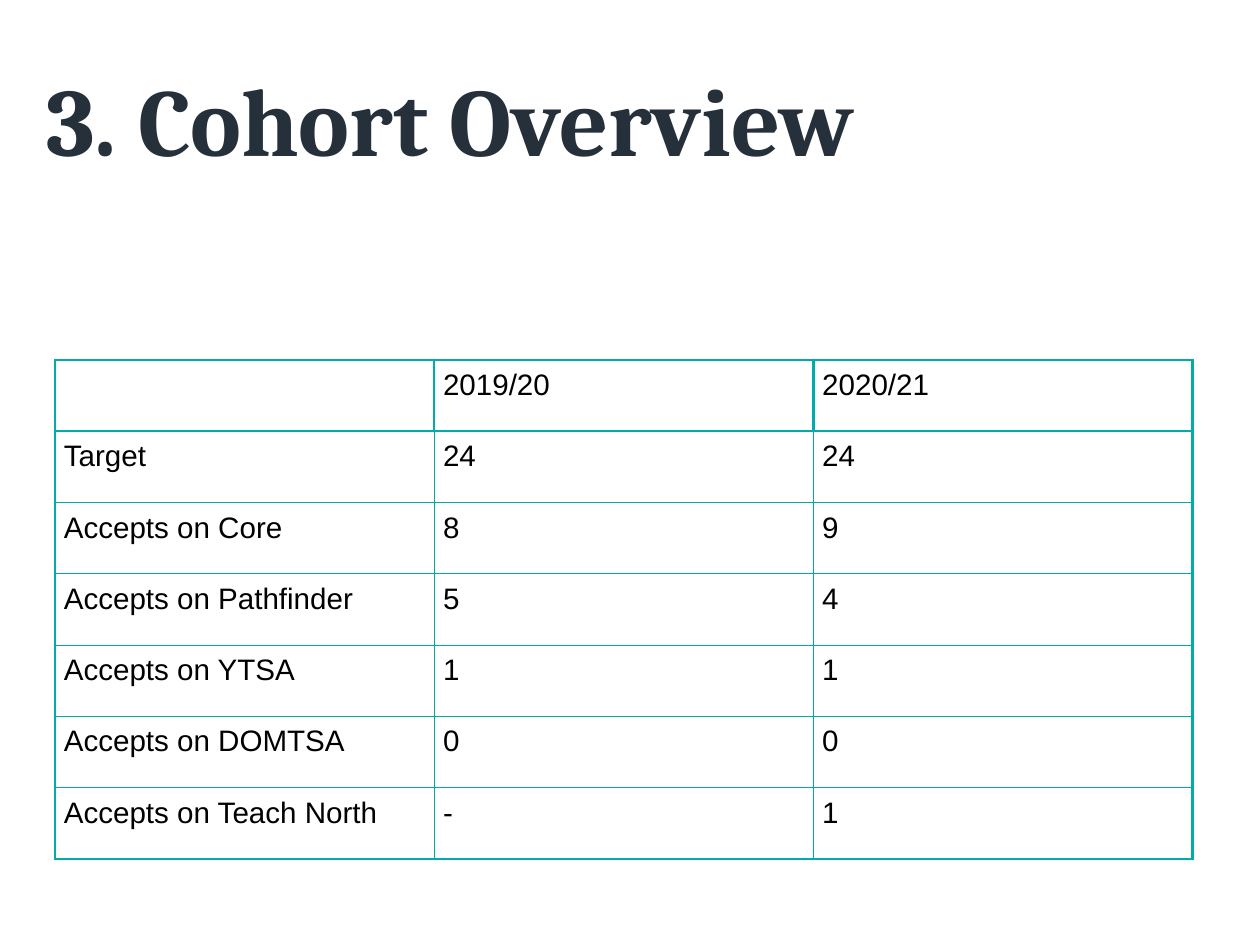
from dataclasses import dataclass

from lxml.etree import SubElement
from pptx import Presentation
from pptx.dml.color import RGBColor
from pptx.enum.text import MSO_ANCHOR, MSO_AUTO_SIZE, PP_ALIGN
from pptx.oxml.ns import qn
from pptx.util import Inches, Pt

TITLE = "3. Cohort Overview"
COHORT_ROWS = [
    ("", "2019/20", "2020/21"),
    ("Target", "24", "24"),
    ("Accepts on Core", "8", "9"),
    ("Accepts on Pathfinder", "5", "4"),
    ("Accepts on YTSA", "1", "1"),
    ("Accepts on DOMTSA", "0", "0"),
    ("Accepts on Teach North", "-", "1"),
]


@dataclass(frozen=True)
class Theme:
    """Colours, fonts, type sizes and line widths."""
    title_color: str = "25303B"
    text_color: str = "000000"
    border_color: str = "00ABAA"
    title_font: str = "Cambria"
    body_font: str = "Arial"
    title_size: int = 78
    body_size: int = 24
    thick: float = 2.25
    thin: float = 0.75


THEME = Theme()
INSET = Inches(0.1)


def set_font(para, name, size, color, bold=False):
    """Format one paragraph's runs."""
    for span in para.runs:
        span.font.name = name
        span.font.size = Pt(size)
        span.font.bold = bold
        span.font.color.rgb = RGBColor.from_string(color)


def set_margins(target):
    """Give a frame or cell equal insets."""
    target.margin_left = target.margin_right = INSET
    target.margin_top = target.margin_bottom = INSET


def set_borders(cell, thick_sides):
    """Draw four borders, thick where the flag is set."""
    properties = cell._tc.get_or_add_tcPr()
    for index, (side, is_thick) in enumerate(zip("LRTB", thick_sides)):
        width = Pt(THEME.thick if is_thick else THEME.thin)
        line = properties.makeelement(qn(f"a:ln{side}"), {"w": str(width)})
        fill = SubElement(line, qn("a:solidFill"))
        SubElement(fill, qn("a:srgbClr"), val=THEME.border_color)
        properties.insert(index, line)


def add_title(page):
    """Place and format the title placeholder."""
    box = page.shapes.title
    box.left, box.top = Inches(0.42), Inches(0.58)
    box.width, box.height = Inches(10.19), Inches(3.28)
    frame = box.text_frame
    frame.text = TITLE
    frame.word_wrap = True
    frame.auto_size = MSO_AUTO_SIZE.NONE
    frame.vertical_anchor = MSO_ANCHOR.TOP
    set_margins(frame)
    para = frame.paragraphs[0]
    para.alignment = PP_ALIGN.LEFT
    set_font(para, THEME.title_font, THEME.title_size, THEME.title_color, bold=True)


def add_cohort_table(page):
    """Build the table with a thick frame and header grid."""
    row_count, column_count = len(COHORT_ROWS), len(COHORT_ROWS[0])
    table = page.shapes.add_table(
        row_count, column_count,
        Inches(0.62), Inches(4.06), Inches(12.83), Inches(5.63),
    ).table
    table.first_row = table.horz_banding = False
    for row, values in enumerate(COHORT_ROWS):
        for column, value in enumerate(values):
            cell = table.cell(row, column)
            cell.text = value
            cell.fill.background()
            cell.vertical_anchor = MSO_ANCHOR.TOP
            set_margins(cell)
            set_font(cell.text_frame.paragraphs[0],
                     THEME.body_font, THEME.body_size, THEME.text_color)
            header = row == 0
            set_borders(cell, (
                header or column == 0,
                header or column == column_count - 1,
                row <= 1,
                header or row == row_count - 1,
            ))


def main():
    """Build and save the slide."""
    deck = Presentation()
    deck.slide_width, deck.slide_height = Inches(14.21), Inches(10.67)
    page = deck.slides.add_slide(deck.slide_layouts[5])
    add_title(page)
    add_cohort_table(page)
    deck.save("out.pptx")


if __name__ == "__main__":
    main()
